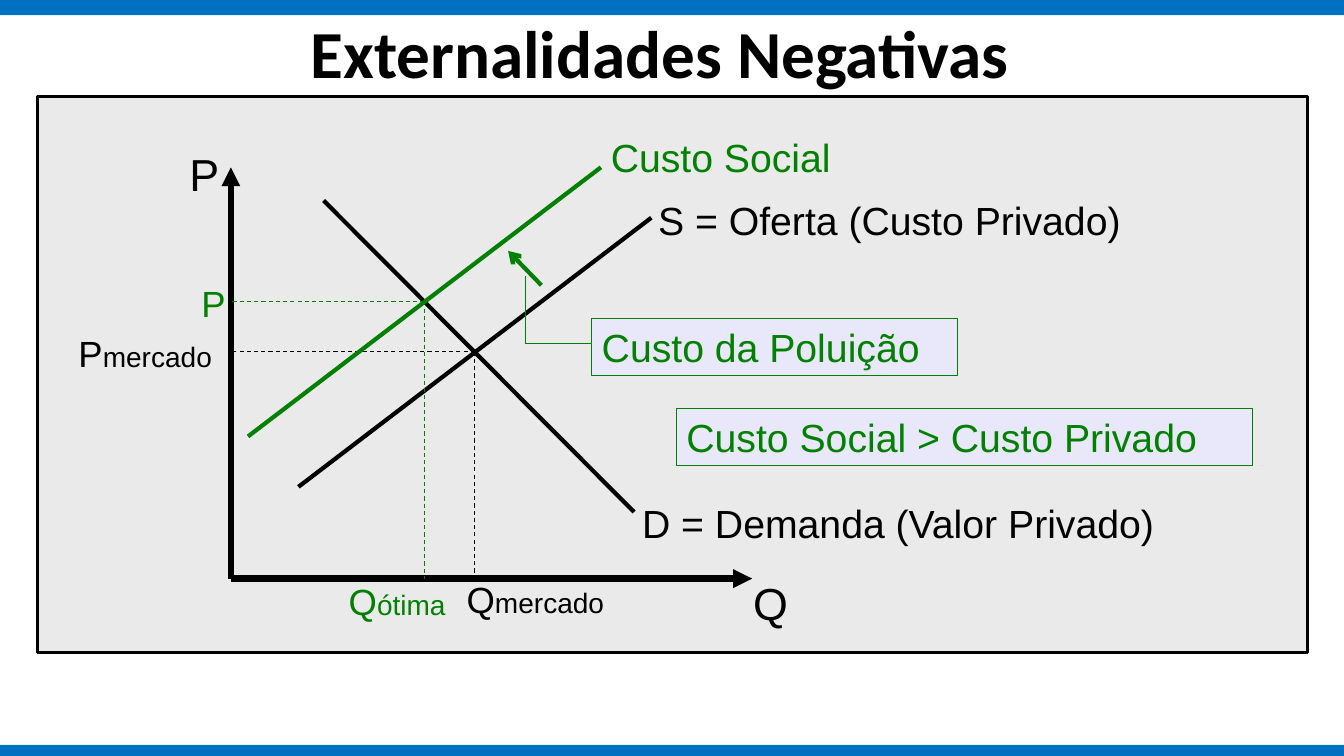
from lxml import etree
from pptx import Presentation
from pptx import util as u
from pptx.dml import color
from pptx.enum import dml, shapes, text
from pptx.oxml import ns

COLORS = {
    "bar": "0070C0",
    "panel": "EAEAEA",
    "callout": "E8E8FA",
    "private": "000000",
    "social": "008000",
}
ORIGIN = (2.29, 5.74)
MARKET = (4.71, 3.49)
OPTIMUM = (4.21, 2.99)


def rgb(name):
    return color.RGBColor.from_string(COLORS[name])


def add_box(slide, left, top, width, height, fill, line=None, weight=0.75):
    shape = slide.shapes.add_shape(
        shapes.MSO_SHAPE.RECTANGLE,
        u.Inches(left), u.Inches(top), u.Inches(width), u.Inches(height))
    shape.shadow.inherit = False
    shape.fill.solid()
    shape.fill.fore_color.rgb = rgb(fill)
    if line:
        shape.line.color.rgb = rgb(line)
        shape.line.width = u.Pt(weight)
    else:
        shape.line.fill.background()
    return shape


def add_line(slide, start, end, ink, weight, head=None, dashed=False):
    connector = slide.shapes.add_connector(
        shapes.MSO_CONNECTOR.STRAIGHT,
        *(u.Inches(value) for value in (*start, *end)))
    connector.line.color.rgb = rgb(ink)
    connector.line.width = u.Pt(weight)
    if dashed:
        connector.line.dash_style = dml.MSO_LINE.DASH
    if head:
        outline = connector.line._get_or_add_ln()
        etree.SubElement(outline, ns.qn("a:tailEnd"), type=head)
    etree.SubElement(connector._element.spPr, ns.qn("a:effectLst"))


def write_runs(shape, runs, ink, font="Arial", bold=False):
    frame = shape.text_frame
    frame.word_wrap = True
    frame.vertical_anchor = text.MSO_ANCHOR.TOP
    paragraph = frame.paragraphs[0]
    paragraph.alignment = text.PP_ALIGN.LEFT
    paragraph.space_before = u.Pt(3)
    for words, size in runs:
        run = paragraph.add_run()
        run.text = words
        run.font.name = font
        run.font.size = u.Pt(size)
        run.font.bold = bold
        run.font.color.rgb = rgb(ink)
    return paragraph


def add_label(slide, left, top, width, height, runs, ink):
    label = slide.shapes.add_textbox(
        u.Inches(left), u.Inches(top), u.Inches(width), u.Inches(height))
    write_runs(label, runs, ink)


def add_callout(slide, left, top, width, words):
    callout = add_box(slide, left, top, width, 0.57, "callout", "social")
    write_runs(callout, [(words, 28)], "social")


def add_title(slide, words):
    title = slide.shapes.add_textbox(
        u.Inches(2.89), u.Inches(0), u.Inches(7.31), u.Inches(0.96))
    paragraph = write_runs(title, [(words, 48)], "private", "Calibri", True)
    paragraph.alignment = text.PP_ALIGN.CENTER
    paragraph.space_before = u.Pt(0)
    title.text_frame.vertical_anchor = text.MSO_ANCHOR.BOTTOM


def add_guides(slide, point, ink):
    x, y = point
    for end in ((x, ORIGIN[1]), (ORIGIN[0], y)):
        add_line(slide, point, end, ink, 0.75, dashed=True)


def add_axes(slide):
    for end in ((ORIGIN[0], 1.66), (7.46, ORIGIN[1])):
        add_line(slide, ORIGIN, end, "private", 4.5, head="triangle")
    add_label(slide, 1.78, 1.41, 0.58, 0.64, [("P", 32)], "private")
    add_label(slide, 7.37, 5.66, 0.58, 0.64, [("Q", 32)], "private")


def add_private_market(slide):
    add_line(slide, (3.21, 1.99), (6.29, 5.08), "private", 3)
    add_line(slide, (2.96, 4.83), (6.46, 2.16), "private", 3)
    add_guides(slide, MARKET, "private")
    add_label(slide, 6.43, 1.9, 5.12, 0.57,
              [("S = Oferta (Custo Privado)", 28)], "private")
    add_label(slide, 6.27, 4.9, 5.65, 0.57,
              [("D = Demanda (Valor Privado)", 28)], "private")
    for left, top, width, letter in ((4.53, 5.68, 1.67, "Q"), (0.68, 3.24, 1.84, "P")):
        add_label(slide, left, top, width, 0.54,
                  [(letter, 26), ("mercado", 20)], "private")


def add_social_cost(slide):
    add_line(slide, (2.46, 4.33), (5.96, 1.66), "social", 3)
    add_guides(slide, OPTIMUM, "social")
    add_label(slide, 5.96, 1.27, 3.08, 0.57, [("Custo Social", 28)], "social")
    add_label(slide, 3.36, 5.7, 1.5, 0.54, [("Q", 26), ("ótima", 20)], "social")
    add_label(slide, 1.9, 2.74, 1.5, 0.54, [("P", 26)], "social")


def add_pollution_cost(slide):
    elbow = (5.21, 3.41)
    add_line(slide, (5.37, 2.83), (5.04, 2.49), "social", 3, head="arrow")
    add_line(slide, (5.21, 2.74), elbow, "social", 0.75)
    add_line(slide, elbow, (5.87, 3.41), "social", 0.75)
    add_callout(slide, 5.87, 3.16, 3.63, "Custo da Poluição")
    add_callout(slide, 6.71, 4.05, 5.71, "Custo Social > Custo Privado")


def main():
    presentation = Presentation()
    presentation.slide_width = u.Inches(13.33)
    presentation.slide_height = u.Inches(7.5)
    slide = presentation.slides.add_slide(presentation.slide_layouts[6])
    add_box(slide, 0, 0, 13.33, 0.15, "bar")
    add_box(slide, 0, 7.39, 13.33, 0.11, "bar")
    add_box(slide, 0.37, 0.96, 12.6, 5.51, "panel", "private", 2.25)
    add_axes(slide)
    add_private_market(slide)
    add_social_cost(slide)
    add_pollution_cost(slide)
    add_title(slide, "Externalidades Negativas")
    presentation.save("out.pptx")


if __name__ == "__main__":
    main()
